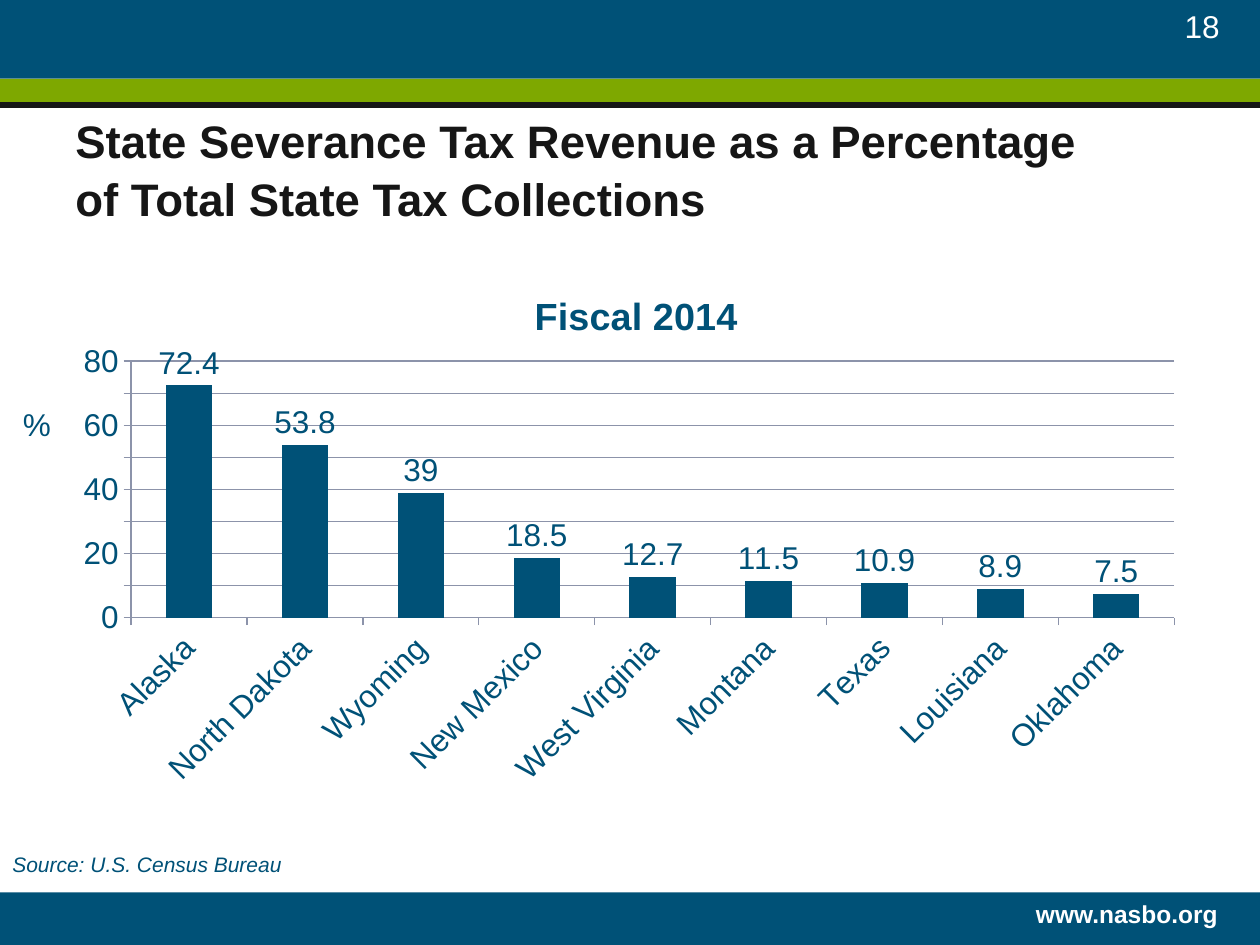
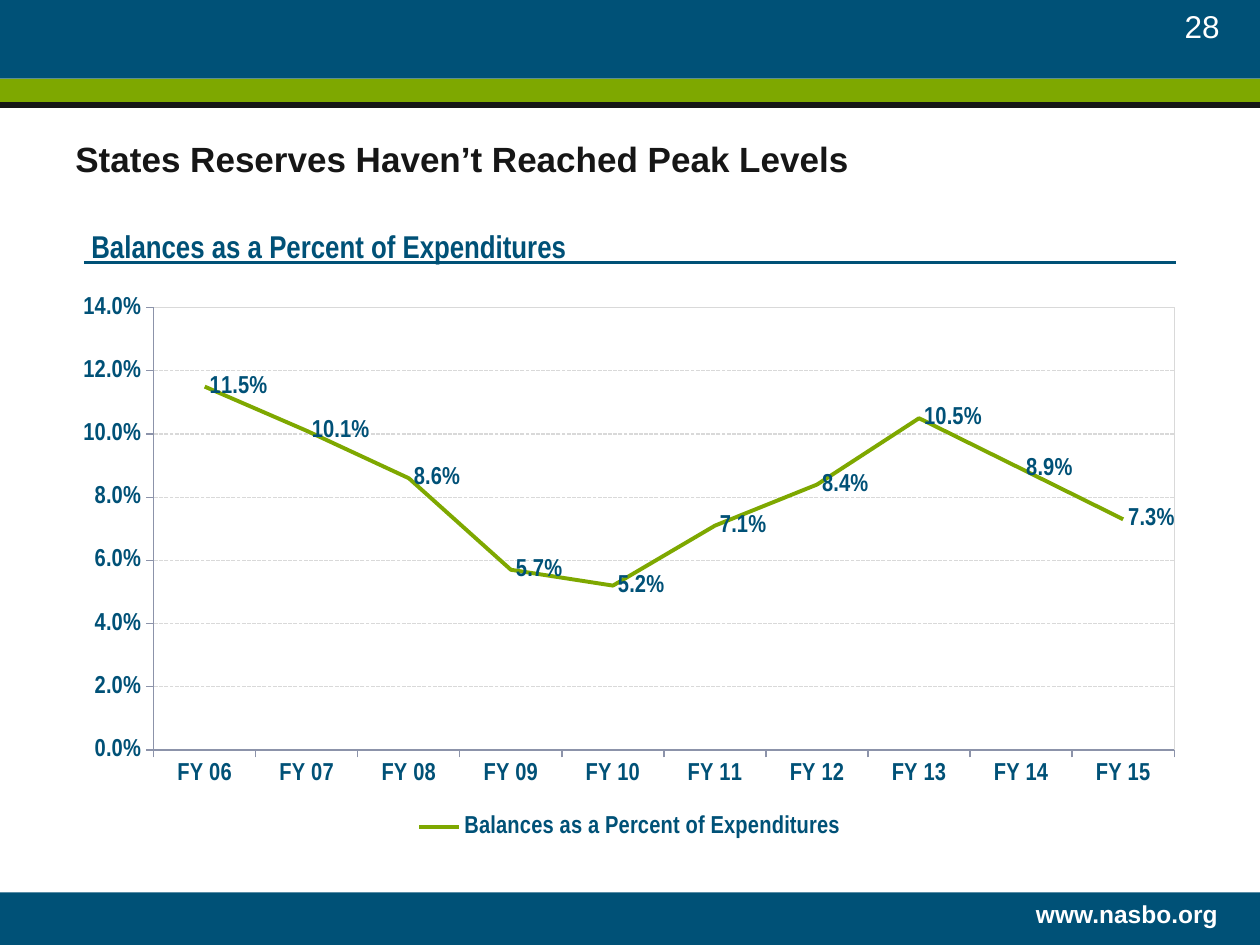
from lxml import etree
from pptx import Presentation
from pptx.chart.data import CategoryChartData
from pptx.dml.color import RGBColor
from pptx.enum.chart import (XL_CHART_TYPE, XL_LABEL_POSITION, XL_LEGEND_POSITION,
                             XL_MARKER_STYLE, XL_TICK_MARK)
from pptx.enum.dml import MSO_LINE
from pptx.enum.shapes import MSO_CONNECTOR, MSO_SHAPE
from pptx.enum.text import MSO_ANCHOR, PP_ALIGN
from pptx.oxml import parse_xml
from pptx.oxml.ns import nsdecls, qn
from pptx.util import Pt

COLUMN, LINE = XL_CHART_TYPE.COLUMN_CLUSTERED, XL_CHART_TYPE.LINE
LEFT, RIGHT = PP_ALIGN.LEFT, PP_ALIGN.RIGHT
TOP, MIDDLE, BOTTOM = MSO_ANCHOR.TOP, MSO_ANCHOR.MIDDLE, MSO_ANCHOR.BOTTOM
BLUE, GREEN, BLACK, WHITE = "005177", "7EA800", "161616", "FFFFFF"
AXIS_GREY, PALE_GREY = "8C93AA", "D9D9D9"
FONT, NARROW = "Arial", "Arial Narrow"


def style(font, size, color=BLUE, bold=False, italic=False, name=FONT):
    font.name, font.size, font.bold, font.italic = name, Pt(size), bold, italic
    font.color.rgb = RGBColor.from_string(color)


def add_text(s, box, lines, size, color=BLUE, bold=False, italic=False,
             align=LEFT, anchor=TOP, spacing=1.0):
    tf = s.shapes.add_textbox(*map(Pt, box)).text_frame
    tf.word_wrap = True
    tf.vertical_anchor = anchor
    p = tf.paragraphs[0]
    p.alignment, p.line_spacing = align, spacing
    for i, line in enumerate(lines):
        if i:
            p.add_line_break()
        r = p.add_run()
        r.text = line
        style(r.font, size, color, bold, italic)


# Content of each slide; layouts are fractions of the chart frame
slides = [
    dict(number="18", title_box=(36, 66, 648, 60), title_size=26,
         title=["State Severance Tax Revenue as a Percentage",
                "of Total State Tax Collections"],
         notes=[((6, 228, 26, 29), "%", 18, False),
                ((0, 483, 354, 22), "Source: U.S. Census Bureau", 12, True)],
         rules=[],
         kind=COLUMN, frame=(36, 144, 648, 312), heading="Fiscal 2014",
         heading_size=21.6, heading_at=(0.41, 0.06), plot_at=(0.06, 0.2, 0.92, 0.47),
         font=FONT, size=18, bold=False, fmt="General", top=80, step=10,
         values={"Alaska": 72.4, "North Dakota": 53.8, "Wyoming": 39,
                 "New Mexico": 18.5, "West Virginia": 12.7, "Montana": 11.5,
                 "Texas": 10.9, "Louisiana": 8.9, "Oklahoma": 7.5}),
    dict(number="28", title_box=(36, 66, 648, 48), title_size=20,
         title=["States Reserves Haven’t Reached Peak Levels"],
         notes=[],
         rules=[(48, 150, 672, BLUE, 2.25)],
         kind=LINE, frame=(36, 126, 648, 356),
         heading="Balances as a Percent of Expenditures",
         heading_size=18, heading_at=(0.02, 0.01), plot_at=(0.08, 0.14, 0.9, 0.71),
         font=NARROW, size=14, bold=True, fmt="0.0%", top=0.14, step=0.02,
         values={"FY 06": 0.115, "FY 07": 0.101, "FY 08": 0.086, "FY 09": 0.057,
                 "FY 10": 0.052, "FY 11": 0.071, "FY 12": 0.084, "FY 13": 0.105,
                 "FY 14": 0.089, "FY 15": 0.073}),
]
bands = [(0, 45, BLUE), (45, 15, GREEN), (510, 30, BLUE)]
header_rule = (0, 60, 720, BLACK, 3)

prs = Presentation()
prs.slide_width, prs.slide_height = Pt(720), Pt(540)

for d in slides:
    s = prs.slides.add_slide(prs.slide_layouts[6])

    # Bands
    for top, height, color in bands:
        sp = s.shapes.add_shape(MSO_SHAPE.RECTANGLE, 0, Pt(top), Pt(720), Pt(height))
        sp.shadow.inherit = False
        sp.fill.solid()
        sp.fill.fore_color.rgb = RGBColor.from_string(color)
        sp.line.fill.background()

    # Title, notes, footer and slide number
    add_text(s, d["title_box"], d["title"], d["title_size"], BLACK, bold=True,
             anchor=MIDDLE, spacing=1.05)
    for box, text, size, italic in d["notes"]:
        add_text(s, box, [text], size, italic=italic)
    add_text(s, (546, 510, 157, 29), ["www.nasbo.org"], 14, WHITE, bold=True, align=RIGHT)
    add_text(s, (644, 0, 60, 29), [d["number"]], 18, WHITE, align=RIGHT, anchor=BOTTOM)

    # Chart
    data = CategoryChartData(number_format=d["fmt"])
    data.categories = list(d["values"])
    data.add_series(d["heading"], list(d["values"].values()))
    chart = s.shapes.add_chart(d["kind"], *map(Pt, d["frame"]), data).chart
    style(chart.font, d["size"], bold=d["bold"], name=d["font"])
    chart.has_legend = d["kind"] == LINE
    r = chart.chart_title.text_frame.paragraphs[0].add_run()
    r.text = d["heading"]
    style(r.font, d["heading_size"], bold=True, name=d["font"])

    # Axes and gridlines
    for axis in (chart.category_axis, chart.value_axis):
        axis.major_tick_mark, axis.minor_tick_mark = XL_TICK_MARK.OUTSIDE, XL_TICK_MARK.NONE
        axis.format.line.color.rgb = RGBColor.from_string(AXIS_GREY)
        axis.format.line.width = Pt(0.75)
        style(axis.tick_labels.font, d["size"], bold=d["bold"], name=d["font"])
    axis.minimum_scale, axis.maximum_scale, axis.major_unit = 0, d["top"], d["step"]
    axis.tick_labels.number_format = d["fmt"]
    axis.tick_labels.number_format_is_linked = False
    axis.has_major_gridlines = True
    grid = axis.major_gridlines.format.line
    grid.width = Pt(0.75)

    # Series and data labels
    plot = chart.plots[0]
    plot.vary_by_categories = False
    plot.has_data_labels = True
    labels = plot.data_labels
    labels.show_value = True
    labels.number_format, labels.number_format_is_linked = d["fmt"], False
    style(labels.font, d["size"], bold=d["bold"], name=d["font"])
    series = plot.series[0]
    plot_area = chart.element.find(".//" + qn("c:plotArea"))
    if d["kind"] == COLUMN:
        plot.gap_width = 150
        labels.position = XL_LABEL_POSITION.OUTSIDE_END
        series.format.fill.solid()
        series.format.fill.fore_color.rgb = RGBColor.from_string(BLUE)
        grid.color.rgb = RGBColor.from_string(AXIS_GREY)
        # Slanted state names
        plot_area.find(f"{qn('c:catAx')}/{qn('c:txPr')}/{qn('a:bodyPr')}").set("rot", "-2700000")
    else:
        labels.position = XL_LABEL_POSITION.RIGHT
        series.smooth = False
        series.marker.style = XL_MARKER_STYLE.NONE
        series.format.line.color.rgb = RGBColor.from_string(GREEN)
        series.format.line.width = Pt(2.25)
        grid.color.rgb = RGBColor.from_string(PALE_GREY)
        grid.dash_style = MSO_LINE.SQUARE_DOT
        chart.legend.position = XL_LEGEND_POSITION.BOTTOM
        chart.legend.include_in_layout = False
        style(chart.legend.font, d["size"], bold=True, name=d["font"])
        # Pale frame around the plot
        plot_area.append(parse_xml(
            f'<c:spPr {nsdecls("c", "a")}><a:noFill/><a:ln w="9525"><a:solidFill>'
            f'<a:srgbClr val="{PALE_GREY}"/></a:solidFill></a:ln></c:spPr>'))

    # Fixed places for the heading and the plot
    heading = chart.element.find(f"{qn('c:chart')}/{qn('c:title')}")
    for parent, index, place in ((heading, 1, d["heading_at"]), (plot_area, 0, d["plot_at"])):
        for old in parent.findall(qn("c:layout")):
            parent.remove(old)
        layout = parse_xml(f'<c:layout {nsdecls("c")}><c:manualLayout/></c:layout>')
        settings = [("xMode", "edge"), ("yMode", "edge"), *zip("xywh", place)]
        if parent is plot_area:
            settings.insert(0, ("layoutTarget", "inner"))
        for tag, value in settings:
            etree.SubElement(layout[0], qn("c:" + tag)).set("val", str(value))
        parent.insert(index, layout)

    # Rules
    for x1, y, x2, color, width in [header_rule, *d["rules"]]:
        line = s.shapes.add_connector(MSO_CONNECTOR.STRAIGHT, Pt(x1), Pt(y), Pt(x2), Pt(y))
        line.line.color.rgb = RGBColor.from_string(color)
        line.line.width = Pt(width)
        etree.SubElement(line.element.spPr, qn("a:effectLst"))

prs.save("out.pptx")
